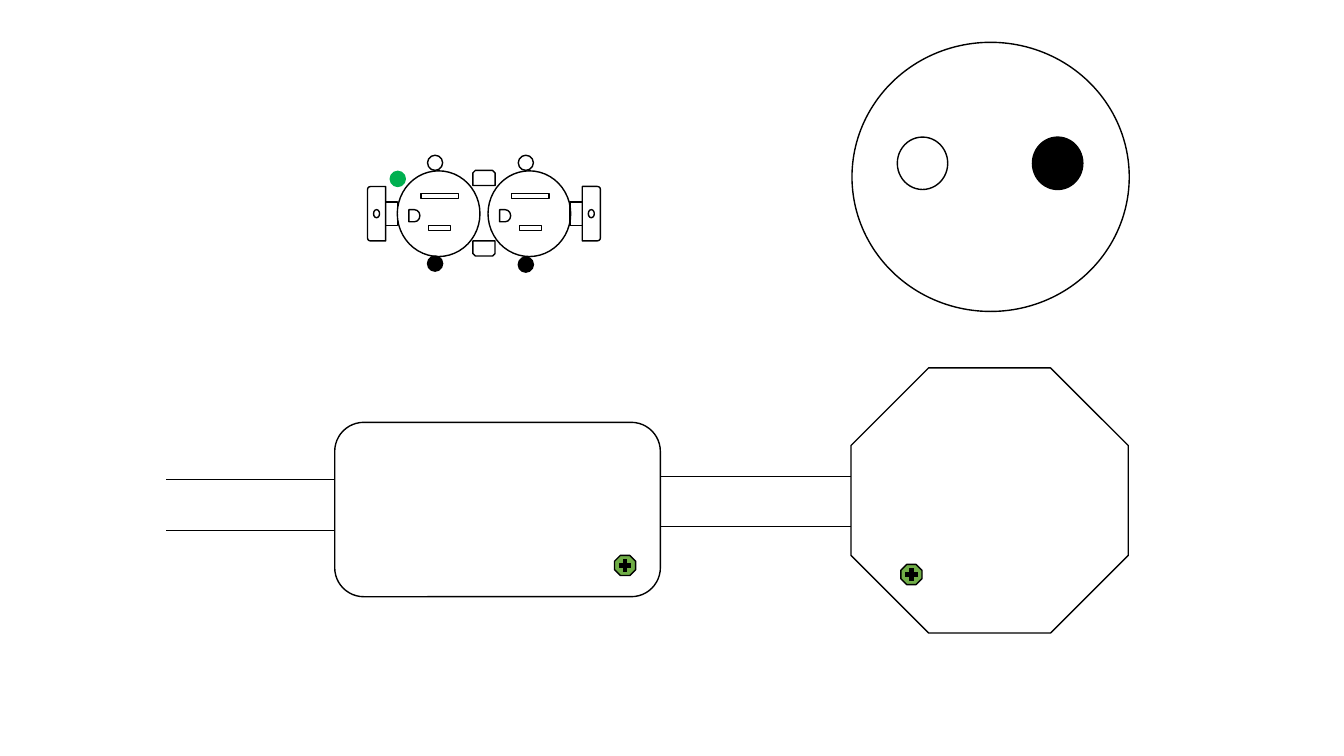
from lxml.etree import SubElement
from pptx import Presentation
from pptx.dml.color import RGBColor
from pptx.enum.shapes import MSO_CONNECTOR, MSO_SHAPE as Shape
from pptx.oxml.ns import qn
from pptx.util import Inches, Pt

THEME = {
    "ink": RGBColor(0, 0, 0),
    "paper": RGBColor(255, 255, 255),
    "ground": RGBColor(0, 176, 80),
    "ground_screw": RGBColor(112, 173, 71),
    "outline": Pt(1),
    "conduit": Pt(0.5),
    "screw_slot": Pt(3),
}

deck = Presentation()
deck.slide_width, deck.slide_height = Inches(13.33), Inches(7.5)
slide = deck.slides.add_slide(deck.slide_layouts[6])
cell = deck.slide_height / 75


def place(kind, center_col, center_row, cols, rows, fill=None, line="ink", turn=0):
    part = slide.shapes.add_shape(
        kind,
        round((center_col - cols / 2) * cell),
        round((center_row - rows / 2) * cell),
        round(cols * cell),
        round(rows * cell),
    )
    part.rotation = turn
    part.shadow.inherit = False
    if fill:
        part.fill.solid()
        part.fill.fore_color.rgb = THEME[fill]
    else:
        part.fill.background()
    part.line.color.rgb = THEME[line]
    part.line.width = THEME["outline"]


def draw_line(start_col, start_row, end_col, end_row, weight):
    ends = [round(v * cell) for v in (start_col, start_row, end_col, end_row)]
    stroke = slide.shapes.add_connector(MSO_CONNECTOR.STRAIGHT, *ends)
    stroke.line.color.rgb = THEME["ink"]
    stroke.line.width = THEME[weight]
    SubElement(stroke._element.spPr, qn("a:effectLst"))


lamp_col, lamp_row = 98.25, 17.55
place(Shape.OVAL, lamp_col, lamp_row, 27.5, 26.7)
for terminal_col, terminal_fill in ((91.5, None), (104.9, "ink")):
    place(Shape.OVAL, terminal_col, 16.2, 5, 5.2, terminal_fill)

place(Shape.OCTAGON, 98.15, 49.65, 27.5, 26.3, "paper")
place(Shape.ROUNDED_RECTANGLE, 49.35, 50.55, 32.3, 17.3)
for start_col, end_col, conduit_rows in (
    (65.5, 84.4, (47.3, 52.2)),
    (16.5, 33.2, (47.6, 52.6)),
):
    for conduit_row in conduit_rows:
        draw_line(start_col, conduit_row, end_col, conduit_row, "conduit")

slot_reach = 0.6
for screw_col, screw_row in ((90.4, 57), (62, 56.1)):
    place(Shape.OCTAGON, screw_col, screw_row, 2.1, 2, "ground_screw")
    draw_line(screw_col, screw_row - slot_reach, screw_col, screw_row + slot_reach, "screw_slot")
    draw_line(screw_col - slot_reach, screw_row, screw_col + slot_reach, screw_row, "screw_slot")

outlet_col, outlet_row = 48, 21.2
for side, hot_row in ((-1, 26.15), (1, 26.25)):
    face_col = outlet_col + side * 4.5
    place(Shape.OVAL, face_col, outlet_row, 8.2, 8.5)
    place(Shape.RECTANGLE, face_col + 0.1, 19.45, 3.7, 0.5)
    place(Shape.RECTANGLE, face_col + 0.1, 22.6, 2.2, 0.5)
    place(Shape.FLOWCHART_DELAY, face_col - 2.4, 21.4, 1.1, 1.2)
    place(Shape.OVAL, face_col - 0.35, 16.15, 1.5, 1.5)
    place(Shape.OVAL, face_col - 0.35, hot_row, 1.5, 1.5, "ink")

    strap_col = outlet_col + side * 10.65
    place(Shape.ROUND_2_SAME_RECTANGLE, strap_col, outlet_row, 5.4, 1.8, turn=side * 90 % 360)
    place(Shape.RECTANGLE, outlet_col + side * 9.15, outlet_row, 1.2, 2.3)
    place(Shape.OVAL, strap_col, outlet_row, 0.6, 0.8)

place(Shape.OVAL, 39.45, 17.75, 1.5, 1.5, "ground", "ground")
for tab_row, tab_turn in ((24.65, 180), (17.65, 0)):
    place(Shape.SNIP_2_SAME_RECTANGLE, outlet_col, tab_row, 2.2, 1.5, turn=tab_turn)

deck.save("out.pptx")
